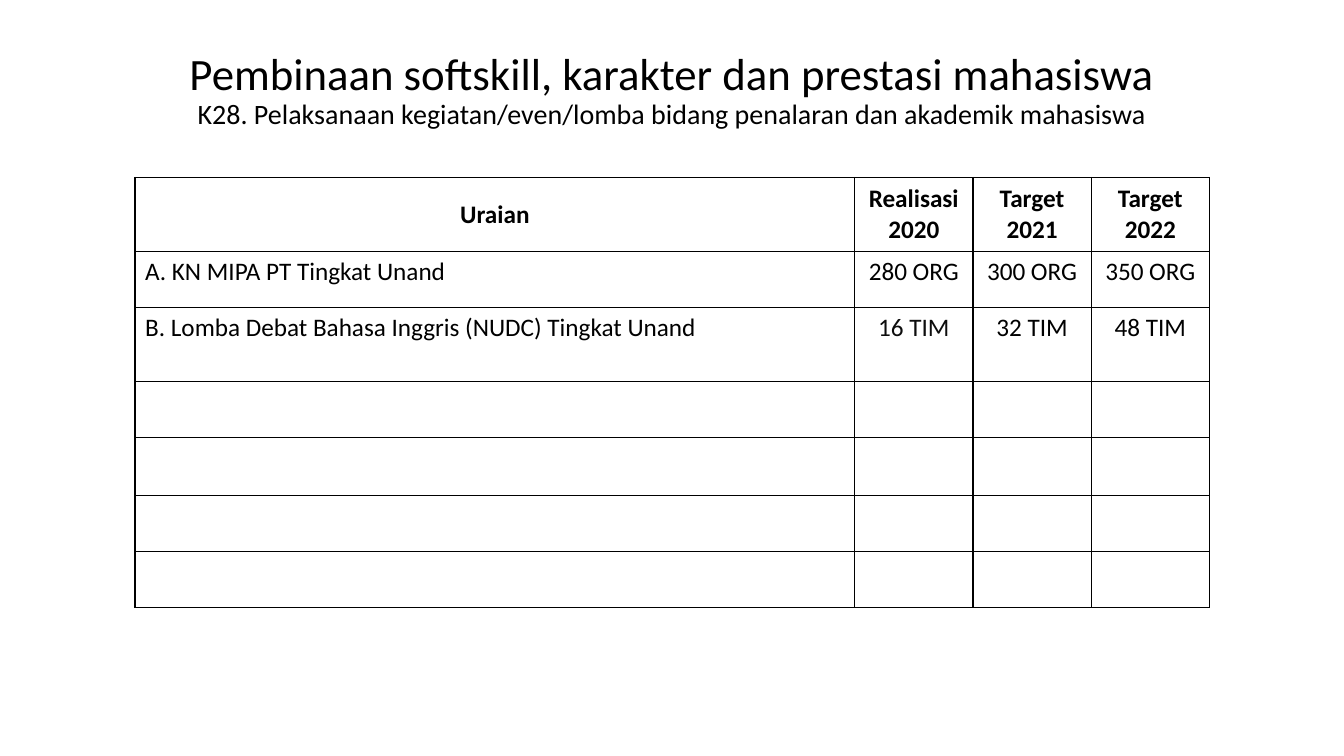
from dataclasses import dataclass

from lxml import etree
from pptx import Presentation
from pptx import util as u
from pptx.dml.color import RGBColor
from pptx.enum import text
from pptx.oxml import ns

FONT = "Calibri"
COLORS = {"ink": "000000", "soft": "0D0D0D", "line": "000000"}
WIDTHS = [514] + [84.5] * 3
HEIGHTS = [53, 40, 53, 40, 41, 40, 40]


@dataclass
class Entry:
    lines: tuple[str, ...]
    bold: bool = False
    center: bool = True
    color: str = "ink"


def add_run(para, words: str, size: float, bold: bool = False,
            color: str = "ink") -> None:
    run = para.add_run()
    run.text = words
    font = run.font
    font.name = FONT
    font.size = u.Pt(size)
    font.bold = bold
    font.color.rgb = RGBColor.from_string(COLORS[color])


def add_title(slide) -> None:
    box = slide.shapes.add_textbox(u.Pt(99.5), u.Pt(26), u.Pt(761), u.Pt(78))
    frame = box.text_frame
    frame.word_wrap = True
    frame.vertical_anchor = text.MSO_ANCHOR.MIDDLE
    para = frame.paragraphs[0]
    para.alignment = text.PP_ALIGN.CENTER
    para.line_spacing = 0.9
    add_run(para, "Pembinaan softskill, karakter dan prestasi mahasiswa", 32)
    para.add_line_break()
    add_run(para, "K28. Pelaksanaan kegiatan/even/lomba bidang penalaran "
                  "dan akademik mahasiswa", 20)


def add_edges(cell) -> None:
    """Rule all four sides of a cell with a thin line."""
    props = cell._tc.get_or_add_tcPr()
    for side in ("lnL", "lnR", "lnT", "lnB"):
        edge = etree.SubElement(props, ns.qn(f"a:{side}"), w=str(u.Pt(1)))
        fill = etree.SubElement(edge, ns.qn("a:solidFill"))
        etree.SubElement(fill, ns.qn("a:srgbClr"), val=COLORS["line"])


def fill_cell(cell, entry: Entry) -> None:
    for i, line in enumerate(entry.lines):
        frame = cell.text_frame
        para = frame.add_paragraph() if i else frame.paragraphs[0]
        if entry.center:
            para.alignment = text.PP_ALIGN.CENTER
        add_run(para, line, 18, entry.bold, entry.color)


def add_grid(slide, rows: list[list[Entry]]) -> None:
    frame = slide.shapes.add_table(
        len(HEIGHTS), len(WIDTHS), u.Pt(96.5), u.Pt(126.75),
        u.Pt(sum(WIDTHS)), u.Pt(sum(HEIGHTS)))
    table = frame.table
    table.first_row = False
    table.horz_banding = False
    for col, width in zip(table.columns, WIDTHS):
        col.width = u.Pt(width)
    for row, height in zip(table.rows, HEIGHTS):
        row.height = u.Pt(height)
    for cell in table.iter_cells():
        add_edges(cell)
        cell.fill.background()
    for cell in table.rows[0].cells:
        cell.vertical_anchor = text.MSO_ANCHOR.MIDDLE
    for row, entries in zip(table.rows, rows):
        for cell, entry in zip(row.cells, entries):
            fill_cell(cell, entry)


def main() -> None:
    deck = Presentation()
    deck.slide_width = u.Pt(960)
    deck.slide_height = u.Pt(540)
    slide = deck.slides.add_slide(deck.slide_layouts[6])
    heads = [("Uraian",), ("Realisasi", "2020"),
             ("Target", "2021"), ("Target", "2022")]
    rows = [
        [Entry(head, bold=True) for head in heads],
        [Entry(("A. KN MIPA PT Tingkat Unand",), center=False),
         Entry(("280 ORG",)), Entry(("300 ORG",)), Entry(("350 ORG",))],
        [Entry(("B. Lomba Debat Bahasa Inggris (NUDC) Tingkat Unand",),
               center=False),
         Entry(("16 TIM",), color="soft"),
         Entry(("32 TIM",)), Entry(("48 TIM",))],
    ]
    add_title(slide)
    add_grid(slide, rows)
    deck.save("out.pptx")


if __name__ == "__main__":
    main()
